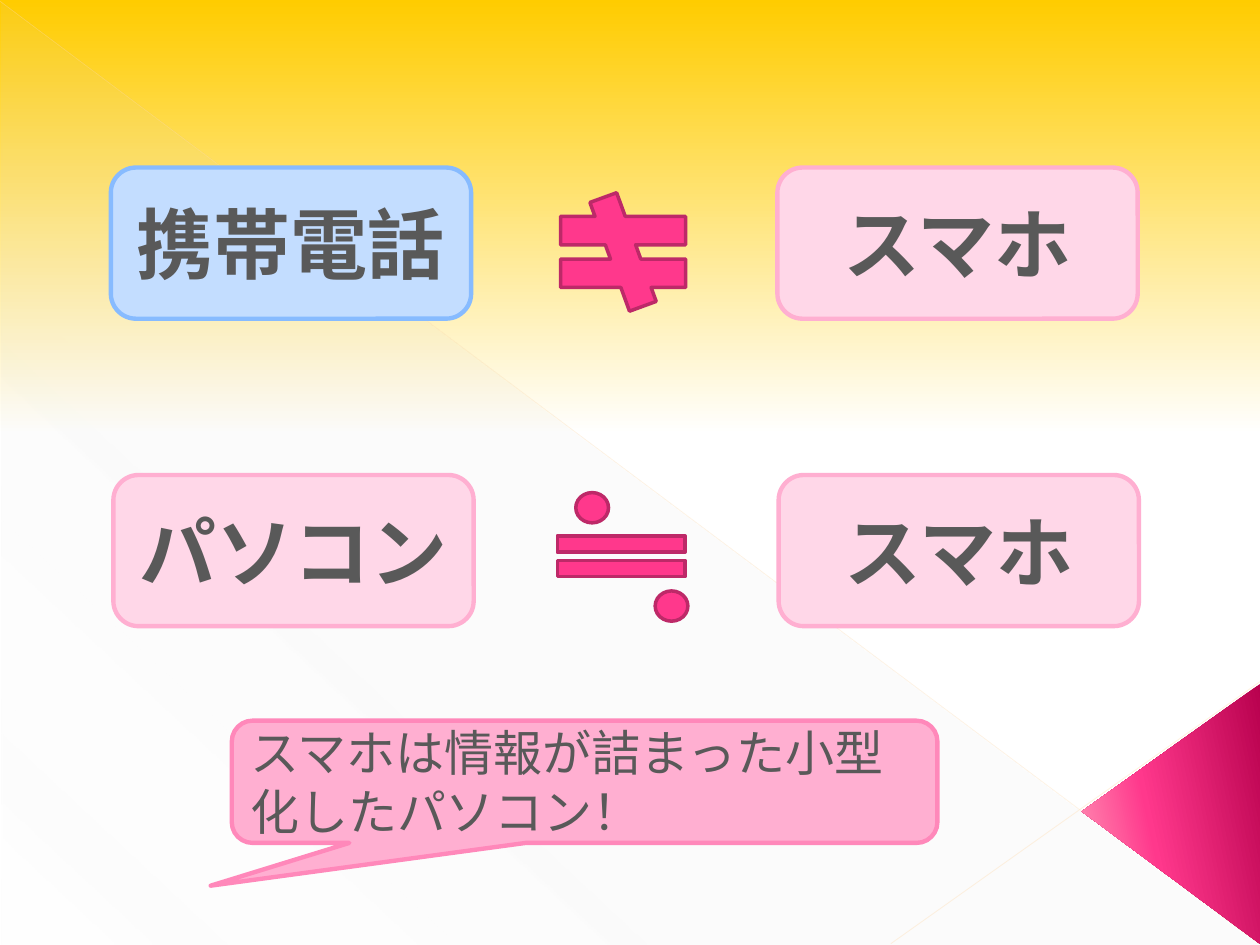
from lxml.etree import SubElement
from pptx import Presentation
from pptx.dml.color import RGBColor
from pptx.enum.shapes import MSO_CONNECTOR, MSO_SHAPE
from pptx.enum.text import MSO_ANCHOR, PP_ALIGN
from pptx.oxml.ns import qn
from pptx.util import Inches, Pt

FONT = "Noto Sans CJK JP"
COLORS = {
    "yellow": "FFCC00", "white": "FFFFFF", "gray": "D2D2D2",
    "tan": "FFDFB4", "sand": "FFE2BD", "text": "595959",
    "deep": "B8014E", "pink": "FF388C", "light": "FF9CB9", "symbol_edge": "BD2968",
    "blue": "C3DDFF", "blue_edge": "87BBFF",
    "pale": "FFD7E8", "rose": "FFAFD1", "rose_edge": "FF88BA",
}


def rgb(color):
    return RGBColor.from_string(COLORS[color])


def add_alpha(color_element, percent):
    SubElement(color_element, qn("a:alpha"), val=str(percent * 1000))


def paint_gradient(fill, owner, stops, angle):
    fill.gradient()
    fill.gradient_angle = 360 - angle
    stop_list = next(owner.iter(qn("a:gsLst")))
    for old_stop in list(stop_list):
        stop_list.remove(old_stop)
    for position, color, opacity in stops:
        stop = SubElement(stop_list, qn("a:gs"), pos=str(position * 1000))
        value = SubElement(stop, qn("a:srgbClr"), val=COLORS[color])
        if opacity < 100:
            add_alpha(value, opacity)


def add_figure(slide, preset, box, adjustments=()):
    figure = slide.shapes.add_shape(preset, *map(Inches, box))
    figure.shadow.inherit = False
    for index, value in enumerate(adjustments):
        figure.adjustments[index] = value
    return figure


def add_solid(slide, preset, box, fill, edge, width, adjustments=()):
    solid = add_figure(slide, preset, box, adjustments)
    solid.fill.solid()
    solid.fill.fore_color.rgb = rgb(fill)
    solid.line.color.rgb = rgb(edge)
    solid.line.width = Pt(width)
    return solid


def add_symbol(slide, preset, box, adjustments=()):
    add_solid(slide, preset, box, "pink", "symbol_edge", 2, adjustments)


def add_gradient_triangle(slide, preset, box, stops, angle, adjustments=()):
    triangle = add_figure(slide, preset, box, adjustments)
    paint_gradient(triangle.fill, triangle.element, stops, angle)
    triangle.line.fill.background()
    return triangle


def add_hairline(slide, start, end, color, width, opacity):
    hairline = slide.shapes.add_connector(
        MSO_CONNECTOR.STRAIGHT, *map(Inches, start + end))
    hairline.line.color.rgb = rgb(color)
    hairline.line.width = Pt(width)
    add_alpha(next(hairline.element.iter(qn("a:srgbClr"))), opacity)
    SubElement(hairline.element.spPr, qn("a:effectLst"))


def write_text(holder, text, size, align, bold=False):
    frame = holder.text_frame
    frame.word_wrap = True
    frame.vertical_anchor = MSO_ANCHOR.MIDDLE
    paragraph = frame.paragraphs[0]
    paragraph.alignment = align
    run = paragraph.add_run()
    run.text = text
    run.font.size = Pt(size)
    run.font.bold = bold
    run.font.color.rgb = rgb("text")
    run.font.name = FONT
    SubElement(run.font._element, qn("a:ea"), typeface=FONT)


def add_device(slide, name, left, top, fill="pale", edge="rose"):
    device = add_solid(slide, MSO_SHAPE.ROUNDED_RECTANGLE,
                       (left, top, 2.86, 1.2), fill, edge, 2.5)
    write_text(device, name, 44, PP_ALIGN.CENTER, bold=True)


def add_backdrop(slide):
    paint_gradient(slide.background.fill, slide.element,
                   [(0, "yellow", 100), (46, "white", 100), (100, "white", 100)], 90)
    add_gradient_triangle(slide, MSO_SHAPE.RIGHT_TRIANGLE, (0.01, 0.02, 9.98, 7.48),
                          [(0, "gray", 10), (70, "gray", 8), (100, "gray", 1)], 133)
    add_hairline(slide, (0, 0.01), (9.99, 7.49), "tan", 0.39, 35)
    add_hairline(slide, (10, 5.41), (7.07, 7.49), "sand", 0.47, 45)
    corner = add_gradient_triangle(
        slide, MSO_SHAPE.ISOSCELES_TRIANGLE, (8.26, 5.75, 2.07, 1.42),
        [(0, "deep", 100), (60, "pink", 100), (100, "light", 100)], 258, [0.51])
    corner.rotation = 270


def add_nearly_equal(slide):
    add_symbol(slide, MSO_SHAPE.MATH_EQUAL, (4.24, 4.14, 1.38, 0.55))
    for left, top in ((4.57, 3.91), (5.2, 4.69)):
        add_symbol(slide, MSO_SHAPE.FLOWCHART_CONNECTOR, (left, top, 0.26, 0.24))


def add_conclusion(slide):
    callout = add_solid(slide, MSO_SHAPE.ROUNDED_RECTANGULAR_CALLOUT,
                        (1.84, 5.72, 5.6, 0.97), "rose", "rose_edge", 2.5,
                        [-0.53, 0.85, 0.17])
    write_text(callout, "スマホは情報が詰まった小型化したパソコン！", 28, PP_ALIGN.LEFT)


def main():
    presentation = Presentation()
    presentation.slide_width = Inches(10)
    presentation.slide_height = Inches(7.5)
    slide = presentation.slides.add_slide(presentation.slide_layouts[6])

    add_backdrop(slide)
    add_device(slide, "携帯電話", 0.88, 1.33, "blue", "blue_edge")
    add_device(slide, "スマホ", 6.17, 1.33)
    add_symbol(slide, MSO_SHAPE.MATH_NOT_EQUAL, (4.27, 1.53, 1.35, 0.94),
               [0.24, 42, 0.12])
    add_device(slide, "パソコン", 0.9, 3.77)
    add_device(slide, "スマホ", 6.18, 3.77)
    add_nearly_equal(slide)
    add_conclusion(slide)

    presentation.save("out.pptx")


if __name__ == "__main__":
    main()
